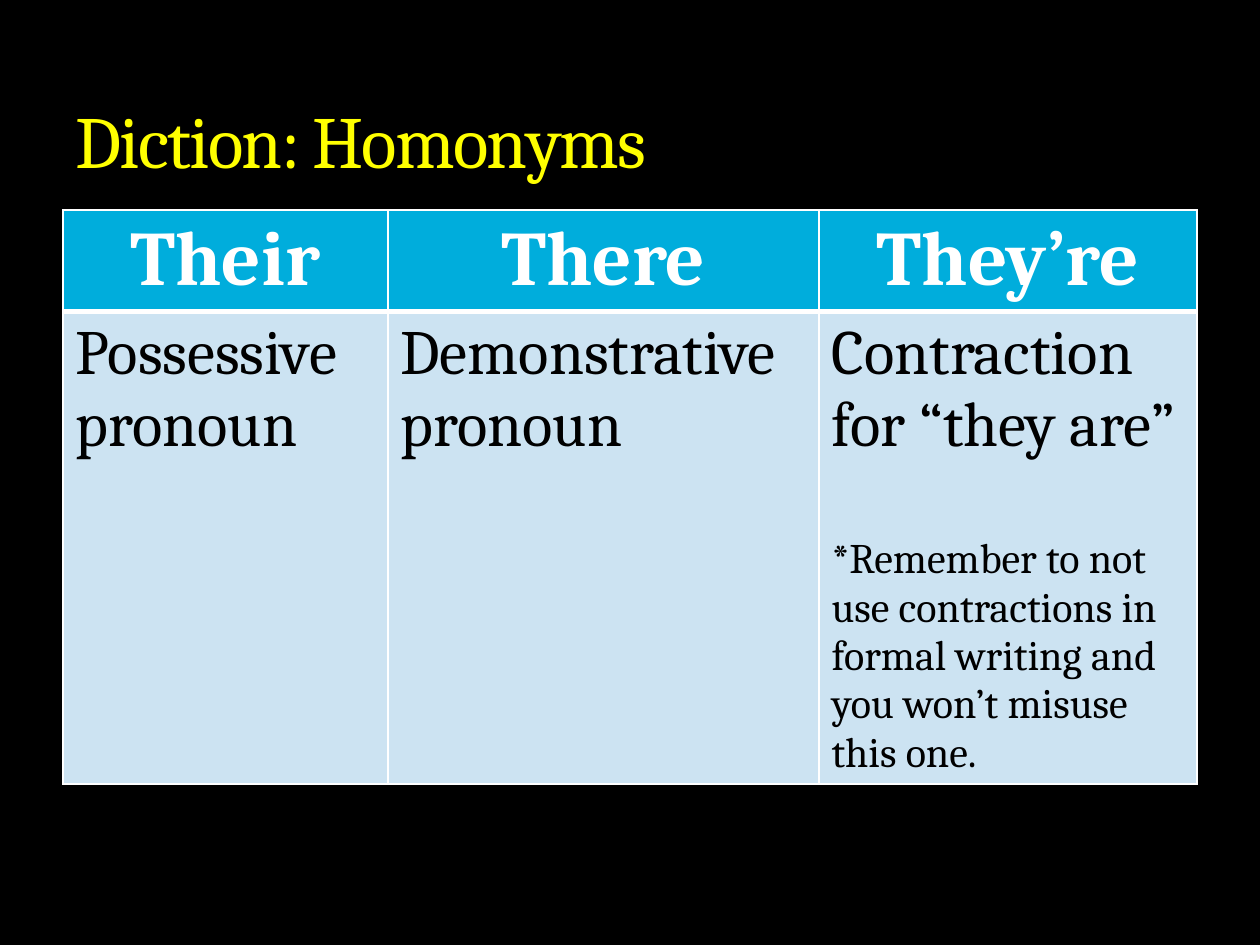
from lxml import etree
from pptx import Presentation
from pptx.dml.color import RGBColor
from pptx.enum.text import MSO_ANCHOR, PP_ALIGN
from pptx.oxml.ns import qn
from pptx.util import Emu, Pt

BOTTOM = MSO_ANCHOR.BOTTOM
CENTER, LEFT = PP_ALIGN.CENTER, PP_ALIGN.LEFT
EMU_PER_PX = 914400 / 126
FONT = "Cambria"
COLORS = {
    "background": "000000",
    "title": "FFFF00",
    "header": "00ADDC",
    "header_text": "FFFFFF",
    "body": "CCE3F2",
    "body_text": "000000",
    "border": "FFFFFF",
}
COLUMN_WIDTHS = [325, 431, 378]
ROW_HEIGHTS = [101, 472]
HOMONYMS = [
    ("Their", ["Possessive pronoun"]),
    ("There", ["Demonstrative pronoun"]),
    ("They’re", [
        "Contraction for “they are”",
        "*Remember to not use contractions in formal writing and you won’t misuse this one.",
    ]),
]


def px(length):
    return Emu(round(length * EMU_PER_PX))


def color(name):
    return RGBColor.from_string(COLORS[name])


def write(para, text, size, color_name, bold=False, align=LEFT):
    para.text = text
    para.alignment = align
    font = para.font
    font.name, font.size, font.bold = FONT, Pt(size), bold
    font.color.rgb = color(color_name)


def set_background(page):
    fill = page.background.fill
    fill.solid()
    fill.fore_color.rgb = color("background")


def add_title(page, text):
    box = page.shapes.add_textbox(px(63), px(21), px(1134), px(168))
    frame = box.text_frame
    frame.word_wrap = True
    frame.vertical_anchor = BOTTOM
    para = frame.paragraphs[0]
    write(para, text, 42, "title")
    para.runs[0].font._element.set("spc", "-100")


def add_borders(cell, widths):
    properties = cell._tc.get_or_add_tcPr()
    for index, (side, width) in enumerate(widths.items()):
        line = etree.Element(qn(f"a:ln{side}"), w=str(Pt(width)))
        fill = etree.SubElement(line, qn("a:solidFill"))
        etree.SubElement(fill, qn("a:srgbClr"), val=COLORS["border"])
        properties.insert(index, line)


def style_cell(cell, fill_name, widths):
    cell.fill.solid()
    cell.fill.fore_color.rgb = color(fill_name)
    add_borders(cell, widths)


def add_homonym_table(page):
    frame = page.shapes.add_table(
        len(ROW_HEIGHTS), len(COLUMN_WIDTHS),
        px(63), px(210), px(sum(COLUMN_WIDTHS)), px(sum(ROW_HEIGHTS)),
    )
    table = frame.table
    for row, height in zip(table.rows, ROW_HEIGHTS):
        row.height = px(height)
    for index, (width, (word, notes)) in enumerate(zip(COLUMN_WIDTHS, HOMONYMS)):
        table.columns[index].width = px(width)
        header, body = table.cell(0, index), table.cell(1, index)
        style_cell(header, "header", {"L": 1, "R": 1, "T": 1, "B": 3})
        style_cell(body, "body", {"L": 1, "R": 1, "T": 3, "B": 1})
        write(header.text_frame.paragraphs[0], word, 44, "header_text", True, CENTER)
        write(body.text_frame.paragraphs[0], notes[0], 36, "body_text")
        for note in notes[1:]:
            para = body.text_frame.add_paragraph()
            write(para, note, 24, "body_text")
            para.space_before = Pt(42)


def main():
    deck = Presentation()
    deck.slide_width, deck.slide_height = px(1260), px(945)
    page = deck.slides.add_slide(deck.slide_layouts[6])
    set_background(page)
    add_homonym_table(page)
    add_title(page, "Diction: Homonyms")
    deck.save("out.pptx")


if __name__ == "__main__":
    main()
